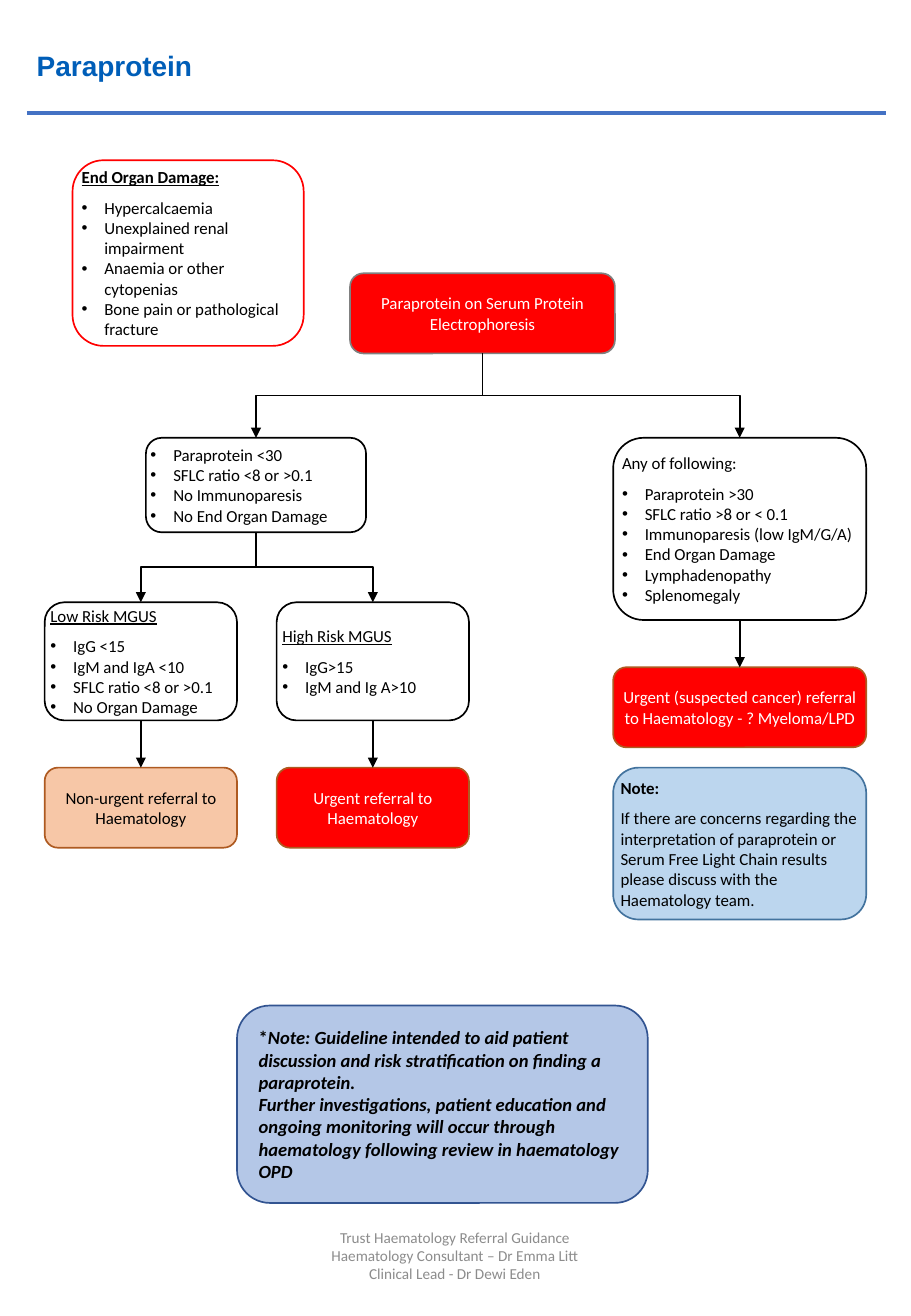
import pptx
import pptx.dml.color
import pptx.enum.shapes
import pptx.enum.text
import pptx.oxml
import pptx.oxml.ns
import pptx.util

Pt = pptx.util.Pt
ALIGN = pptx.enum.text.PP_ALIGN
ANCHOR = pptx.enum.text.MSO_ANCHOR
CONNECTOR = pptx.enum.shapes.MSO_CONNECTOR
ROUNDED = pptx.enum.shapes.MSO_SHAPE.ROUNDED_RECTANGLE
BOTTOM, TOP = 2, 0
INDENT = 13.5
REFERRAL_H = 47.5
COLORS = {
    "title": "005EB8", "rule": "4472C4", "red": "FF0000", "white": "FFFFFF",
    "black": "000000", "grey": "808080", "brown": "AE5A21", "peach": "F7C7A7",
    "sky": "BCD6EE", "sky_edge": "43739E", "blue": "B4C7E7",
    "blue_edge": "325491", "footer": "8C8C8C",
}


def rgb(name):
    """Return the palette colour called name."""
    return pptx.dml.color.RGBColor.from_string(COLORS[name])


def add_xml(parent, tag, **attributes):
    """Append a drawing element with its attributes to parent."""
    child = pptx.oxml.parse_xml(f"<a:{tag} {pptx.oxml.ns.nsdecls('a')}/>")
    for key, value in attributes.items():
        child.set(key, value)
    parent.append(child)


def style(paragraph, size, color, font="Calibri", **emphasis):
    """Format every run of a paragraph."""
    for run in paragraph.runs:
        run.font.size, run.font.name = Pt(size), font
        run.font.color.rgb = rgb(color)
        for key, value in emphasis.items():
            setattr(run.font, key, value)


def set_frame(frame, inset_x, inset_y):
    """Wrap and centre a text frame vertically with the given insets."""
    frame.word_wrap = True
    frame.vertical_anchor = ANCHOR.MIDDLE
    frame.margin_left = frame.margin_right = Pt(inset_x)
    frame.margin_top = frame.margin_bottom = Pt(inset_y)


def add_card(slide, box, fill, line, inset_x=0, inset_y=0):
    """Add an empty rounded card."""
    card = slide.shapes.add_shape(ROUNDED, *map(Pt, box))
    card.shadow.inherit = False
    card.fill.solid()
    card.fill.fore_color.rgb = rgb(fill)
    card.line.color.rgb = rgb(line)
    card.line.width = Pt(1)
    set_frame(card.text_frame, inset_x, inset_y)
    return card


def add_referral(slide, box, text, fill="red", line="brown", color="white"):
    """Add a card with one centred statement."""
    card = add_card(slide, box, fill, line)
    card.text_frame.text = text
    statement = card.text_frame.paragraphs[0]
    statement.alignment = ALIGN.CENTER
    style(statement, 10, color)
    return card


def add_criteria(slide, box, heading, items, fill="white", line="black",
                 bulleted=True, **emphasis):
    """Add a card with an optional heading above a list."""
    card = add_card(slide, box, fill, line)
    lines = [heading] * bool(heading) + items
    card.text_frame.text = "\n".join(lines)
    for index, paragraph in enumerate(card.text_frame.paragraphs):
        paragraph.alignment = ALIGN.LEFT
        if heading and index == 0:
            paragraph.space_after = Pt(6)
            style(paragraph, 10, "black", **emphasis)
            continue
        style(paragraph, 10, "black")
        if bulleted:
            properties = paragraph._p.get_or_add_pPr()
            properties.set("marL", str(Pt(INDENT)))
            properties.set("indent", str(-Pt(INDENT)))
            add_xml(properties, "buFont", typeface="Arial")
            add_xml(properties, "buChar", char="•")
    return card


def finish_line(connector, color, width, arrow=True):
    """Colour a connector, drop its shadow and add an arrowhead."""
    connector.line.color.rgb = rgb(color)
    connector.line.width = Pt(width)
    if arrow:
        add_xml(connector.line._get_or_add_ln(), "tailEnd", type="triangle")
    add_xml(connector._element.spPr, "effectLst")


def join(slide, upper, lower, kind=CONNECTOR.STRAIGHT):
    """Draw an arrow from the bottom of one card to the top of another."""
    arrow = slide.shapes.add_connector(kind, 0, 0, 0, 0)
    arrow.begin_connect(upper, BOTTOM)
    arrow.end_connect(lower, TOP)
    if kind == CONNECTOR.ELBOW:
        start_x, start_y = arrow.begin_x, arrow.begin_y
        end_x, end_y = arrow.end_x, arrow.end_y
        across, down = abs(end_x - start_x), end_y - start_y
        arrow.left = (start_x + end_x - down) // 2
        arrow.top = (start_y + end_y - across) // 2
        arrow.width, arrow.height = down, across
        rightward = end_x > start_x
        transform = arrow._element.spPr.find(pptx.oxml.ns.qn("a:xfrm"))
        transform.set("rot", "16200000" if rightward else "5400000")
        transform.set("flipH", "1" if rightward else "0")
        transform.set("flipV", "0")
    finish_line(arrow, "black", 1)


def draw_header(slide, box):
    """Draw the title and the rule below it."""
    x, y, w, h = box
    title = slide.shapes.add_textbox(Pt(x), Pt(y), Pt(377), Pt(48))
    set_frame(title.text_frame, 5.8, 2.9)
    title.text_frame.text = "Paraprotein"
    style(title.text_frame.paragraphs[0], 16.6, "title", "Arial", bold=True)
    rule = slide.shapes.add_connector(
        CONNECTOR.STRAIGHT, Pt(x), Pt(y + h), Pt(x + w), Pt(y + h))
    finish_line(rule, "rule", 2.75, arrow=False)


def draw_pathway(slide, box):
    """Draw the decision tree from the finding to the referrals."""
    x, y, w, h = box
    branch_y, risk_y, referral_y = y + 97.5, y + 195, y + h - REFERRAL_H
    risk_w, urgent_w = 114, 150
    high_x, urgent_x = x + 137.5, x + w - urgent_w
    finding = add_referral(slide, (x + 181, y, 157, REFERRAL_H),
                           "Paraprotein on Serum Protein Electrophoresis",
                           line="grey")
    monitored = add_criteria(
        slide, (x + 60, branch_y, 130.5, 56), "",
        ["Paraprotein <30", "SFLC ratio <8 or >0.1", "No Immunoparesis",
         "No End Organ Damage"])
    suspected = add_criteria(
        slide, (urgent_x, branch_y, urgent_w, 108), "Any of following:",
        ["Paraprotein >30", "SFLC ratio >8 or < 0.1",
         "Immunoparesis (low IgM/G/A)", "End Organ Damage",
         "Lymphadenopathy", "Splenomegaly"])
    low_risk = add_criteria(
        slide, (x, risk_y, risk_w, 70), "Low Risk MGUS",
        ["IgG <15", "IgM and IgA <10", "SFLC ratio <8 or >0.1",
         "No Organ Damage"], underline=True)
    high_risk = add_criteria(
        slide, (high_x, risk_y, risk_w, 70), "High Risk MGUS",
        ["IgG>15", "IgM and Ig A>10"], underline=True)
    non_urgent = add_referral(
        slide, (x, referral_y, risk_w, REFERRAL_H),
        "Non-urgent referral to Haematology", fill="peach", color="black")
    urgent = add_referral(slide, (high_x, referral_y, risk_w, REFERRAL_H),
                          "Urgent referral to Haematology")
    cancer = add_referral(
        slide, (urgent_x, y + 233.5, urgent_w, REFERRAL_H),
        "Urgent (suspected cancer) referral to Haematology - ? Myeloma/LPD")
    for upper, lower in ((finding, suspected), (finding, monitored),
                         (monitored, high_risk), (monitored, low_risk)):
        join(slide, upper, lower, CONNECTOR.ELBOW)
    for upper, lower in ((suspected, cancer), (low_risk, non_urgent),
                         (high_risk, urgent)):
        join(slide, upper, lower)


def draw_guideline(slide, box):
    """Draw the note on the purpose of the guideline."""
    note = add_card(slide, box, "blue", "blue_edge", 7.2, 3.6)
    note.text_frame.text = (
        "*\nFurther investigations, patient education and ongoing monitoring "
        "will occur through haematology following review in haematology OPD")
    purpose, follow_up = note.text_frame.paragraphs
    purpose.add_run().text = (
        "Note: Guideline intended to aid patient discussion and risk "
        "stratification on finding a paraprotein.")
    for paragraph in (purpose, follow_up):
        paragraph.alignment = ALIGN.LEFT
        style(paragraph, 11, "black", bold=True, italic=True)
    purpose.runs[0].font.italic = False


def draw_footer(slide, box):
    """Draw the centred credits."""
    credits = slide.shapes.add_textbox(*map(Pt, box))
    set_frame(credits.text_frame, 7.2, 3.6)
    credits.text_frame.text = (
        "Trust Haematology Referral Guidance\n"
        "Haematology Consultant – Dr Emma Litt Clinical Lead - Dr Dewi Eden")
    for paragraph in credits.text_frame.paragraphs:
        paragraph.alignment = ALIGN.CENTER
        style(paragraph, 9, "footer")


def main():
    """Build the slide and save it."""
    deck = pptx.Presentation()
    deck.slide_width, deck.slide_height = Pt(540), Pt(780)
    slide = deck.slides.add_slide(deck.slide_layouts[6])
    draw_header(slide, (16, 15, 509, 52))
    add_criteria(slide, (43, 95, 137, 110), "End Organ Damage:",
                 ["Hypercalcaemia", "Unexplained renal impairment",
                  "Anaemia or other cytopenias",
                  "Bone pain or pathological fracture"],
                 line="red", bold=True, underline=True)
    draw_pathway(slide, (26.5, 162, 487, 340.5))
    add_criteria(slide, (363.5, 455, 150, 90), "Note:",
                 ["If there are concerns regarding the interpretation of "
                  "paraprotein or Serum Free Light Chain results please "
                  "discuss with the Haematology team."],
                 "sky", "sky_edge", bulleted=False, bold=True)
    draw_guideline(slide, (140.5, 596, 243.5, 117))
    draw_footer(slide, (178.5, 723, 182, 42))
    deck.save("out.pptx")


if __name__ == "__main__":
    main()
